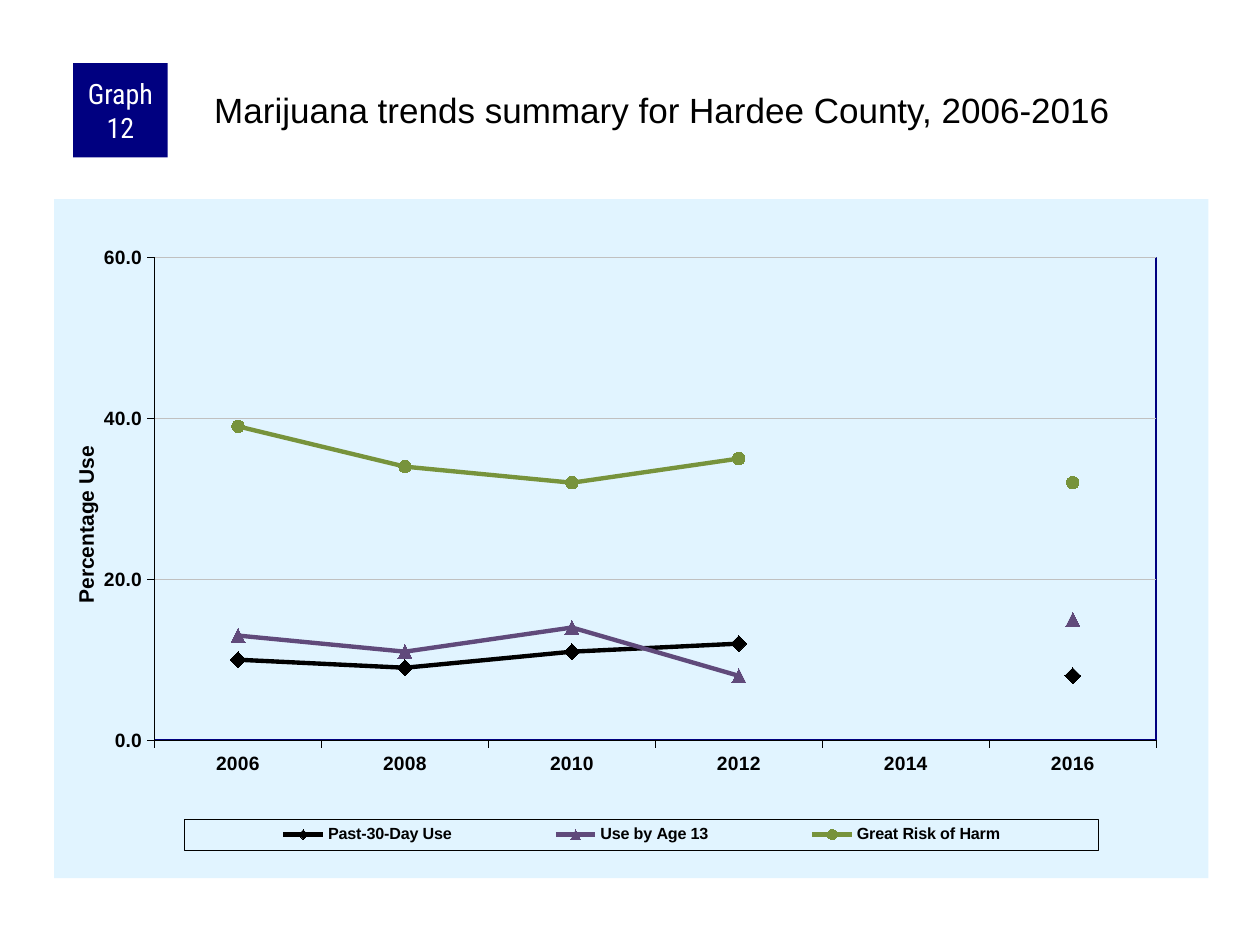
from dataclasses import dataclass
from typing import Optional

from lxml import etree
from pptx import Presentation
from pptx.chart.data import CategoryChartData
from pptx.dml.color import RGBColor
from pptx.enum.chart import XL_CHART_TYPE as ChartType
from pptx.enum.chart import XL_LEGEND_POSITION as LegendPosition
from pptx.enum.chart import XL_MARKER_STYLE as Marker
from pptx.enum.chart import XL_TICK_MARK as TickMark
from pptx.enum.shapes import MSO_SHAPE as Shape
from pptx.enum.text import MSO_ANCHOR as Anchor
from pptx.enum.text import PP_ALIGN as Align
from pptx.oxml import parse_xml
from pptx.oxml.ns import nsdecls, qn
from pptx.util import Inches, Pt

BLACK = RGBColor(0x00, 0x00, 0x00)
WHITE = RGBColor(0xFF, 0xFF, 0xFF)
NAVY = RGBColor(0x00, 0x00, 0x80)
PURPLE = RGBColor(0x60, 0x4A, 0x7B)
GREEN = RGBColor(0x77, 0x93, 0x3C)
GRID_GRAY = RGBColor(0xC0, 0xC0, 0xC0)
PALE_BLUE = RGBColor(0xE1, 0xF4, 0xFF)

YEARS = ["2006", "2008", "2010", "2012", "2014", "2016"]


@dataclass
class Trend:
    name: str
    values: list[Optional[int]]
    color: RGBColor
    marker: Marker
    marker_size: int


TRENDS = [
    Trend("Past-30-Day Use", [10, 9, 11, 12, None, 8], BLACK, Marker.DIAMOND, 9),
    Trend("Use by Age 13", [13, 11, 14, 8, None, 15], PURPLE, Marker.TRIANGLE, 8),
    Trend("Great Risk of Harm", [39, 34, 32, 35, None, 32], GREEN, Marker.CIRCLE, 7),
]


def set_attributes(target, values: dict) -> None:
    for name, value in values.items():
        setattr(target, name, value)


def set_font(font, size: float, color: RGBColor = BLACK, bold: bool = False,
             name: str = "Arial") -> None:
    set_attributes(font, {"size": Pt(size), "bold": bold, "name": name})
    font.color.rgb = color


def set_line(line, color: RGBColor, width: float) -> None:
    line.color.rgb = color
    line.width = Pt(width)


def set_layout(parent, index: int, inner: bool = False, **fractions: float) -> None:
    """Place a chart part by fractions of the chart's size."""
    for old in parent.findall(qn("c:layout")):
        parent.remove(old)
    layout = etree.Element(qn("c:layout"))
    manual = etree.SubElement(layout, qn("c:manualLayout"))
    settings = {"layoutTarget": "inner"} if inner else {}
    settings |= {"xMode": "edge", "yMode": "edge"} | fractions
    for tag, value in settings.items():
        etree.SubElement(manual, qn(f"c:{tag}")).set("val", str(value))
    parent.insert(index, layout)


def shape_properties(content: str):
    return parse_xml(f"<c:spPr {nsdecls('c', 'a')}>{content}</c:spPr>")


def solid(color: RGBColor) -> str:
    return f'<a:solidFill><a:srgbClr val="{color}"/></a:solidFill>'


def border(color: RGBColor, width: float) -> str:
    return f'<a:ln w="{Pt(width)}">{solid(color)}</a:ln>'


def add_badge(slide) -> None:
    badge = slide.shapes.add_shape(
        Shape.RECTANGLE, Inches(0.58), Inches(0.5), Inches(0.75), Inches(0.75))
    badge.shadow.inherit = False
    badge.fill.solid()
    badge.fill.fore_color.rgb = NAVY
    badge.line.fill.background()
    frame = badge.text_frame
    set_attributes(frame, {
        "word_wrap": True, "vertical_anchor": Anchor.MIDDLE,
        "margin_left": Inches(0.05), "margin_right": Inches(0.05),
        "margin_top": 0, "margin_bottom": 0})
    label = frame.paragraphs[0]
    label.alignment = Align.CENTER
    run = label.add_run()
    run.text = "Graph 12"
    set_font(run.font, 16, WHITE, name="Roboto Condensed")


def add_heading(slide) -> None:
    heading = slide.shapes.title
    set_attributes(heading, {
        "left": Inches(1.67), "top": Inches(0.67),
        "width": Inches(7.92), "height": Inches(0.83)})
    frame = heading.text_frame
    set_attributes(frame, {
        "word_wrap": True, "vertical_anchor": Anchor.TOP,
        "margin_left": Inches(0.03), "margin_top": Inches(0.03),
        "margin_right": 0, "margin_bottom": 0})
    line = frame.paragraphs[0]
    line.alignment = Align.LEFT
    run = line.add_run()
    run.text = "Marijuana trends summary for Hardee County, 2006-2016"
    set_font(run.font, 20)


def format_axes(chart) -> None:
    for axis in (chart.category_axis, chart.value_axis):
        axis.major_tick_mark = TickMark.OUTSIDE
        axis.minor_tick_mark = TickMark.NONE
        set_font(axis.tick_labels.font, 11, bold=True)
        set_line(axis.format.line, BLACK, 0.25)

    percent = chart.value_axis
    set_attributes(percent, {
        "minimum_scale": 0, "maximum_scale": 60, "major_unit": 20,
        "has_major_gridlines": True, "has_title": True})
    set_attributes(percent.tick_labels, {
        "number_format": "0.0", "number_format_is_linked": False})
    set_line(percent.major_gridlines.format.line, GRID_GRAY, 0.25)
    caption = percent.axis_title
    run = caption.text_frame.paragraphs[0].add_run()
    run.text = "Percentage Use"
    set_font(run.font, 12, bold=True)
    set_layout(caption._element, 1, x=0.013, y=0.358)


def format_legend(chart) -> None:
    chart.has_legend = True
    legend = chart.legend
    set_attributes(legend, {
        "position": LegendPosition.BOTTOM, "include_in_layout": False})
    set_font(legend.font, 9.2, bold=True)
    set_layout(legend._element, 1, x=0.113, y=0.913, w=0.792, h=0.046)
    legend._element.find(qn("c:txPr")).addprevious(
        shape_properties("<a:noFill/>" + border(BLACK, 0.25)))


def add_trend_chart(slide) -> None:
    data = CategoryChartData(number_format="0.0")
    data.categories = YEARS
    for trend in TRENDS:
        data.add_series(trend.name, trend.values)
    chart = slide.shapes.add_chart(
        ChartType.LINE_MARKERS, Inches(0.43), Inches(1.58),
        Inches(9.16), Inches(5.39), data).chart
    chart.has_title = False
    set_font(chart.font, 8)
    format_axes(chart)
    format_legend(chart)

    # Chart background and plot frame
    chart_element = chart._chartSpace.find(qn("c:chart"))
    chart_element.addnext(shape_properties(solid(PALE_BLUE) + "<a:ln><a:noFill/></a:ln>"))
    plot_area = chart_element.find(qn("c:plotArea"))
    set_layout(plot_area, 0, inner=True, x=0.087, y=0.086, w=0.868, h=0.711)
    plot_area.append(shape_properties("<a:noFill/>" + border(NAVY, 1)))

    # Trend lines and markers
    chart.plots[0].vary_by_categories = False
    for series, trend in zip(chart.plots[0].series, TRENDS):
        series.smooth = False
        set_line(series.format.line, trend.color, 2.5)
        marker = series.marker
        set_attributes(marker, {"style": trend.marker, "size": trend.marker_size})
        marker.format.fill.solid()
        marker.format.fill.fore_color.rgb = trend.color
        set_line(marker.format.line, trend.color, 0.75)


def main() -> None:
    deck = Presentation()
    set_attributes(deck, {"slide_width": Inches(10), "slide_height": Inches(7.5)})
    slide = deck.slides.add_slide(deck.slide_layouts.get_by_name("Title Only"))
    add_badge(slide)
    add_heading(slide)
    add_trend_chart(slide)
    deck.save("out.pptx")


if __name__ == "__main__":
    main()
